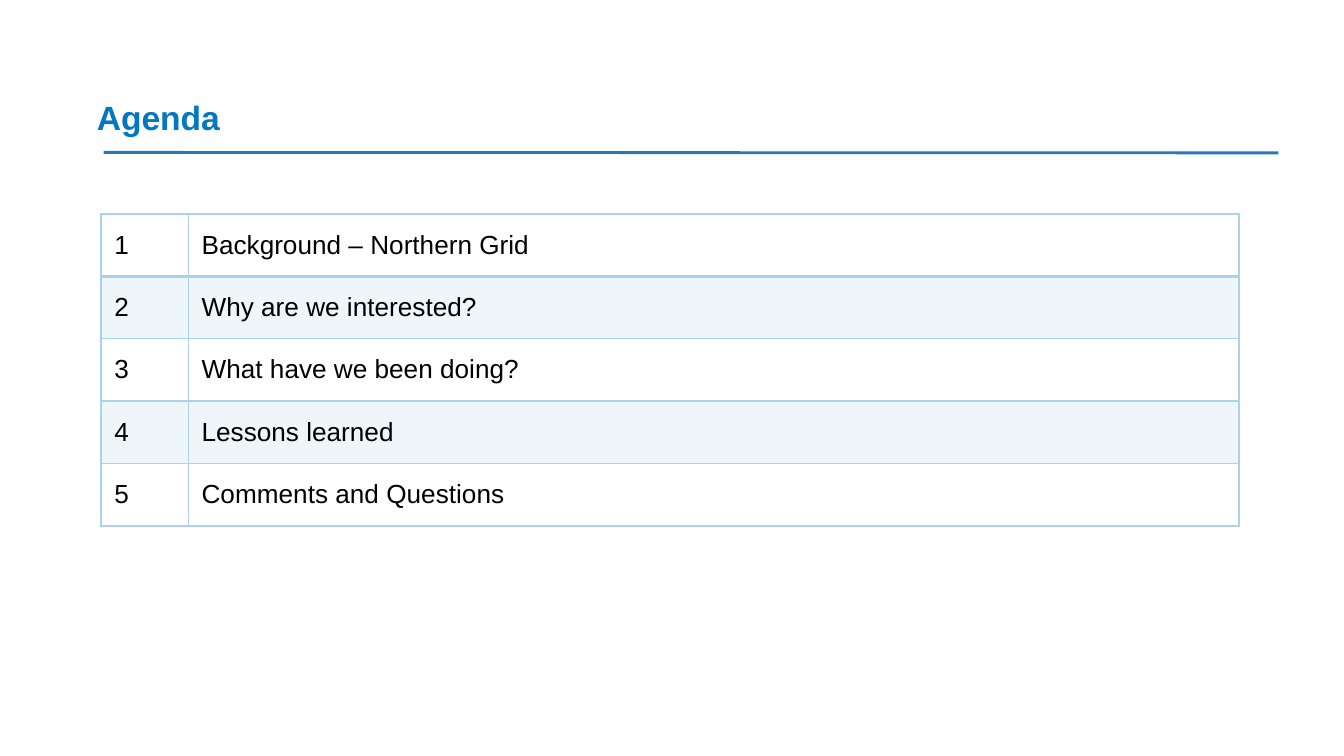
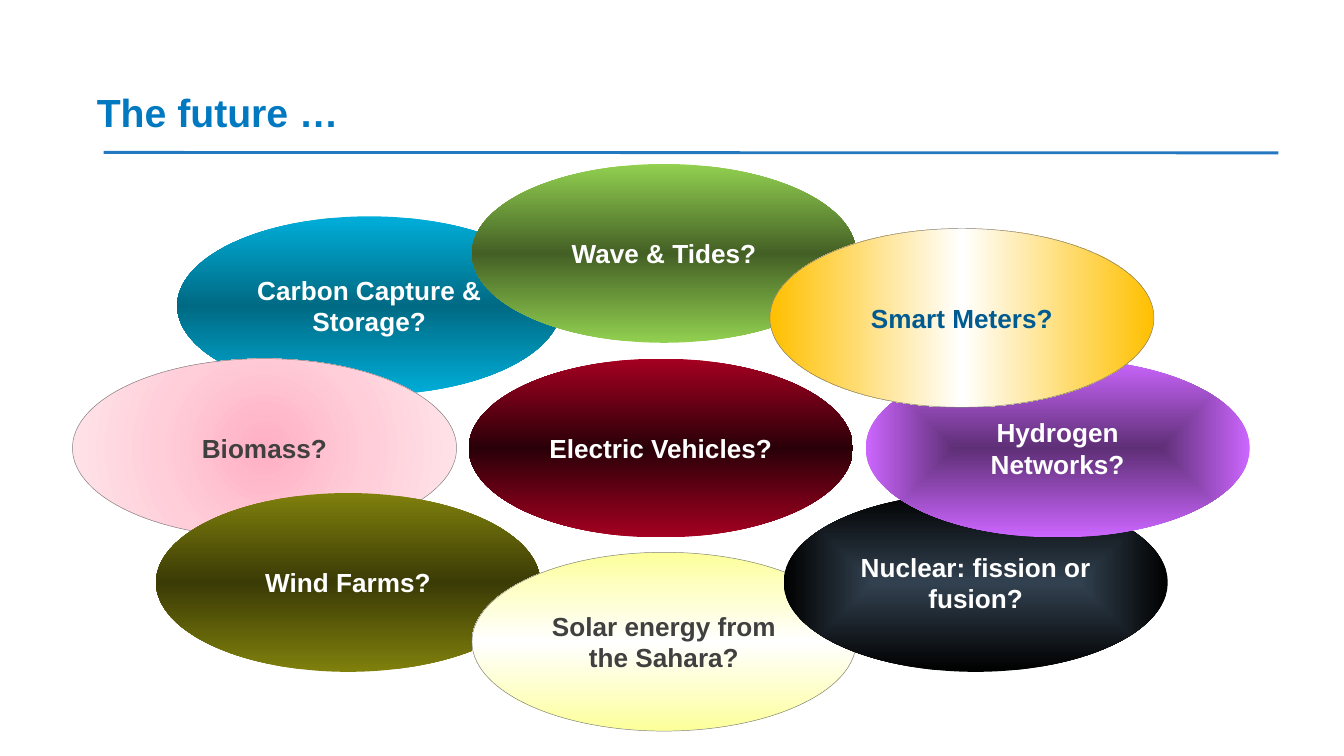
from lxml import etree
from pptx import Presentation
from pptx.dml.color import RGBColor
from pptx.enum import shapes, text
from pptx.oxml.ns import qn
from pptx.util import Cm, Pt

FONT = "Arial"
BLUE, RULE, GRID = "0079C1", "2478C0", "AAD3E9"
WHITE, GREY, EDGE, BLACK = "FFFFFF", "404040", "808080", "000000"
MID, LOW = text.MSO_ANCHOR.MIDDLE, text.MSO_ANCHOR.BOTTOM
PAD = dict(margin_left=Cm(0.18), margin_right=Cm(0.18),
           margin_top=Cm(0.1), margin_bottom=Cm(0.1))

AGENDA = ["Background – Northern Grid", "Why are we interested?",
          "What have we been doing?", "Lessons learned",
          "Comments and Questions"]
COLS, ROW = (1.65, 19.86), 1.18

OVAL = 7.26, 3.38
# label, left, top, gradient colours, gradient kind, text colour, edge
IDEAS = [
    ("Electric Vehicles?", 8.86, 6.78, "A50021 2A0008 A50021", "down", WHITE, None),
    ("Carbon Capture & Storage?", 3.35, 4.09, "00AED9 006A84 00AED9", "down", WHITE, None),
    ("Biomass?", 1.37, 6.78, "FFAFC4 FFCED9 FFE7EC", "circle", GREY, EDGE),
    ("Wind Farms?", 2.95, 9.32, "7F800C 3B3B06 7F800C", "down", WHITE, None),
    ("Solar energy from the Sahara?", 8.92, 10.44, "FDFF9B FFFFFF FDFF9B", "down", GREY, EDGE),
    ("Nuclear: fission or fusion?", 14.81, 9.32, "324150 000000", "shape", WHITE, None),
    ("Hydrogen Networks?", 16.36, 6.78, "5E2F76 CC66FF", "shape", WHITE, None),
    ("Wave & Tides?", 8.92, 3.1, "92D050 446025 92D050", "down", WHITE, None),
    ("Smart Meters?", 14.55, 4.32, "FFC000 FFFFFF FFC000", "across", "005B91", EDGE),
]
ANGLES = {"down": 90, "across": 0}


def rgb(code):
    return RGBColor.from_string(code)


def put(item, values):
    for key, value in values.items():
        setattr(item, key, value)


def node(parent, tag, **attrs):
    """Add an XML child in the drawing namespace."""
    child = etree.SubElement(parent, qn("a:" + tag))
    for key, value in attrs.items():
        child.set(key, str(value))
    return child


def write(frame, words, size, color, bold=True, align=None):
    para = frame.paragraphs[0]
    run = para.add_run()
    run.text = words
    put(run.font, dict(name=FONT, size=Pt(size), bold=bold))
    run.font.color.rgb = rgb(color)
    if align is not None:
        para.alignment = align


def start(deck, title, top, high, size, anchor):
    """Add a slide with its rule and title."""
    slide = deck.slides.add_slide(deck.slide_layouts[6])
    rule = slide.shapes.add_connector(
        shapes.MSO_CONNECTOR.STRAIGHT, Cm(1.96), Cm(2.88), Cm(24.16), Cm(2.89))
    rule.line.color.rgb = rgb(RULE)
    rule.line.width = Pt(1.5)
    node(rule.line._get_or_add_ln().getparent(), "effectLst")
    box = slide.shapes.add_textbox(Cm(1.65), Cm(top), Cm(17.09), Cm(high))
    put(box.text_frame, dict(PAD, word_wrap=True, vertical_anchor=anchor))
    write(box.text_frame, title, size, BLUE)
    return slide


def border(cell, widths):
    """Draw the four edges; widths maps L, R, T, B to points."""
    props = cell._tc.get_or_add_tcPr()
    for spot, (side, width) in enumerate(widths.items()):
        line = node(props, "ln" + side, w=Pt(width))
        node(node(line, "solidFill"), "srgbClr", val=GRID)
        props.insert(spot, line)


def shade(shape, colors, kind):
    """Fill a shape with evenly spaced gradient stops."""
    shape.fill.background()
    props = shape._element.spPr
    grad = node(props, "gradFill", rotWithShape=1)
    stops = node(grad, "gsLst")
    for i, color in enumerate(colors):
        stop = node(stops, "gs", pos=100000 * i // (len(colors) - 1))
        node(stop, "srgbClr", val=color)
    if kind in ANGLES:
        node(grad, "lin", ang=ANGLES[kind] * 60000, scaled=1)
    else:
        way = node(grad, "path", path=kind)
        node(way, "fillToRect", **dict.fromkeys("ltrb", 50000))
    props.replace(props.find(qn("a:noFill")), grad)


def agenda(deck):
    slide = start(deck, "Agenda", 1.73, 0.97, 18, LOW)
    count = len(AGENDA)
    table = slide.shapes.add_table(count, len(COLS), Cm(1.91), Cm(4.04),
                                   Cm(sum(COLS)), Cm(ROW * count)).table
    put(table, dict(first_row=False, horz_banding=False))
    for col, wide in zip(table.columns, COLS):
        col.width = Cm(wide)
    for r, topic in enumerate(AGENDA):
        table.rows[r].height = Cm(ROW)
        for c, words in enumerate((str(r + 1), topic)):
            cell = table.cell(r, c)
            put(cell, dict(PAD, margin_left=Cm(0.25), margin_right=Cm(0.25),
                           vertical_anchor=MID))
            write(cell.text_frame, words, 14, BLACK, bold=False)
            if r % 2:
                cell.fill.solid()
                cell.fill.fore_color.rgb = rgb(GRID)
                tint = cell._tc.tcPr.find(".//" + qn("a:srgbClr"))
                node(tint, "alpha", val=20000)
            else:
                cell.fill.background()
            border(cell, dict(L=1, R=1, T=2 if r == 1 else 1, B=2 if r == 0 else 1))


def future(deck):
    slide = start(deck, "The future …", 1.57, 1.09, 21, MID)
    for words, left, top, colors, kind, ink, edge in IDEAS:
        oval = slide.shapes.add_shape(shapes.MSO_SHAPE.OVAL, Cm(left), Cm(top),
                                      *map(Cm, OVAL))
        oval.shadow.inherit = False
        shade(oval, colors.split(), kind)
        if edge:
            oval.line.color.rgb = rgb(edge)
            oval.line.width = Pt(0.25)
        else:
            oval.line.fill.background()
        put(oval.text_frame, dict(PAD, word_wrap=True, vertical_anchor=MID))
        write(oval.text_frame, words, 14, ink, align=text.PP_ALIGN.CENTER)


def main():
    deck = Presentation()
    put(deck, dict(slide_width=Cm(25.4), slide_height=Cm(14.29)))
    agenda(deck)
    future(deck)
    deck.save("out.pptx")


if __name__ == "__main__":
    main()
